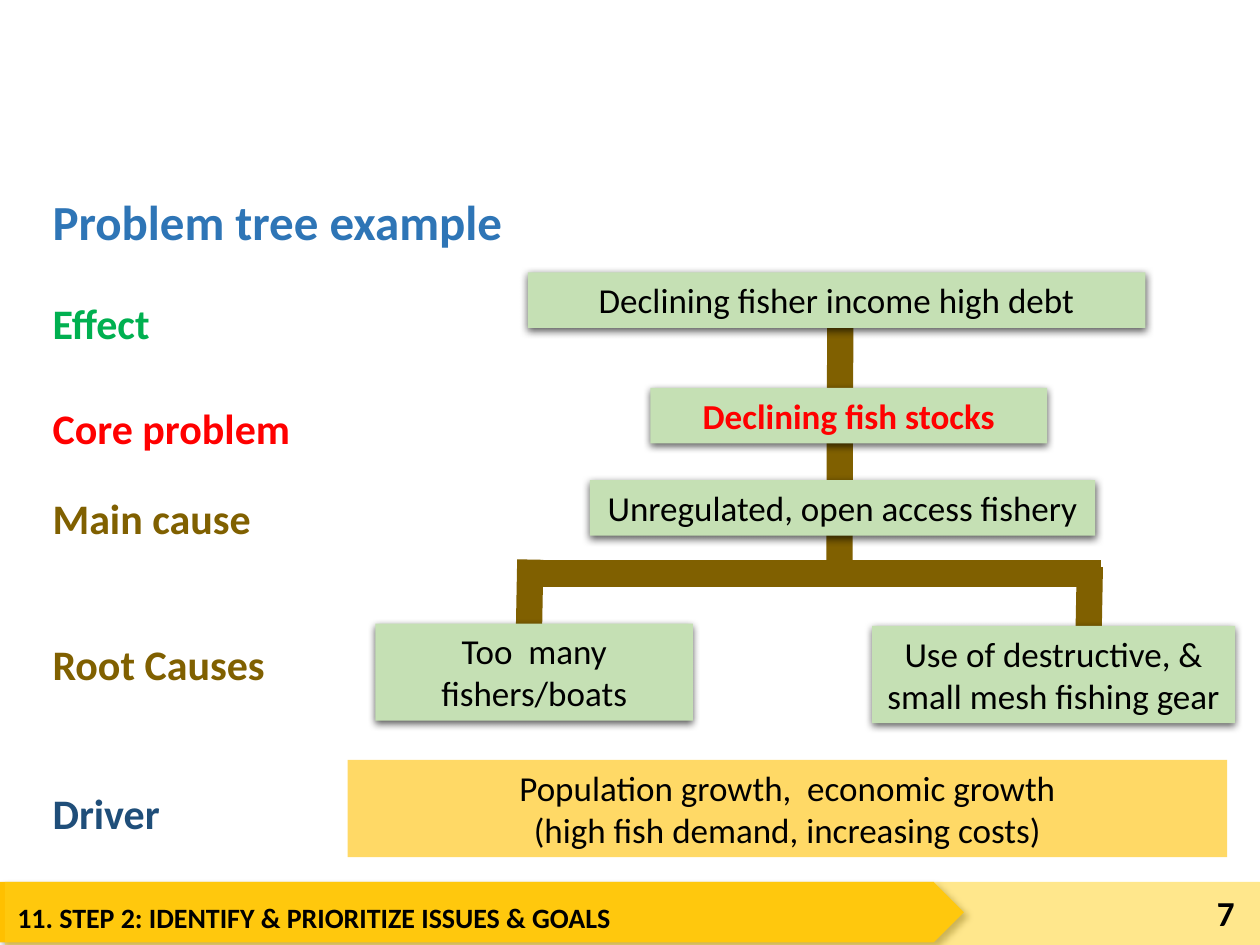
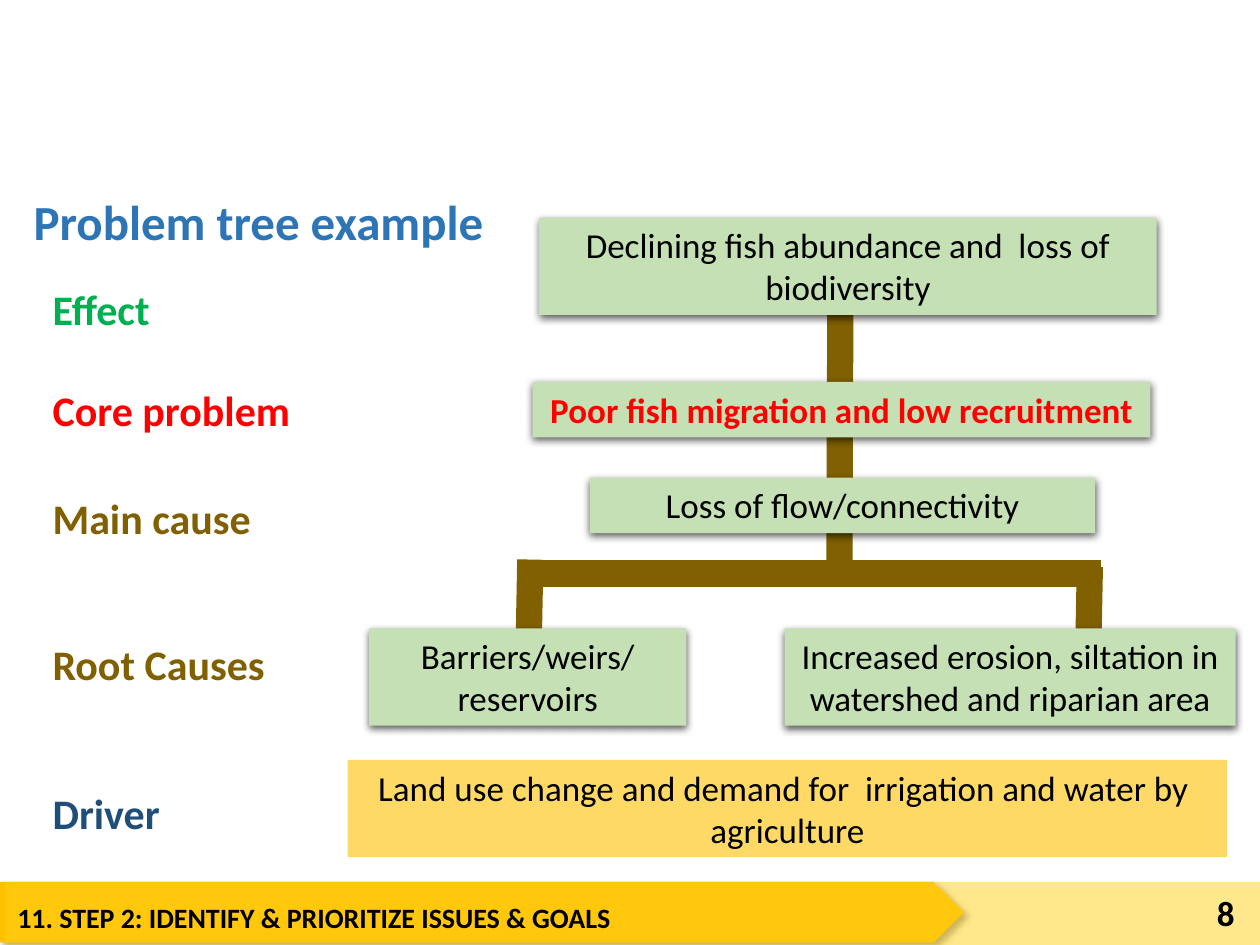
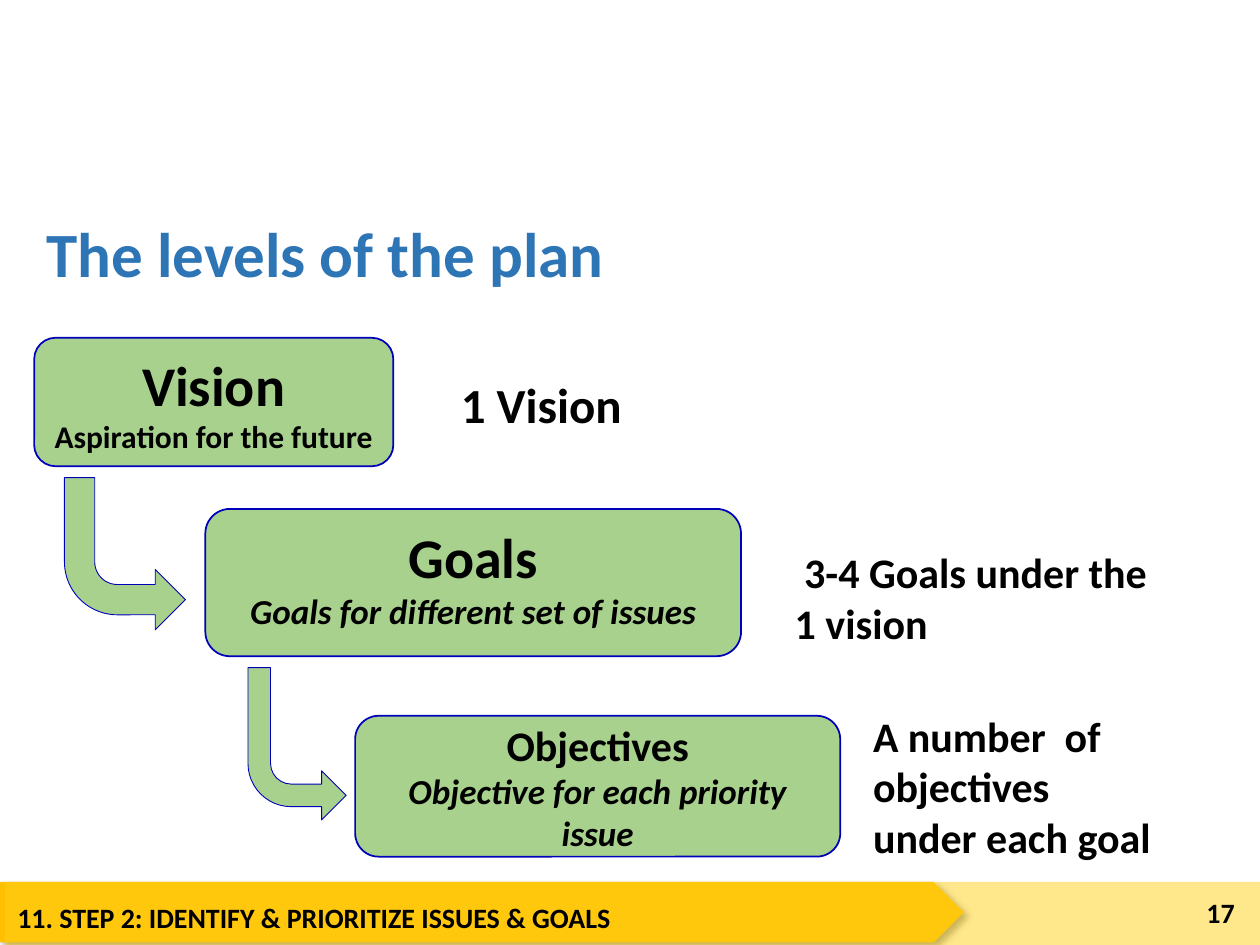
import pptx
import pptx.dml.color
import pptx.enum.shapes
import pptx.enum.text
import pptx.oxml
import pptx.oxml.ns
import pptx.util
from dataclasses import dataclass

Cm = pptx.util.Cm
Pt = pptx.util.Pt
SHAPE = pptx.enum.shapes.MSO_SHAPE
ALIGN = pptx.enum.text.PP_ALIGN
ANCHOR = pptx.enum.text.MSO_ANCHOR


@dataclass(frozen=True)
class Theme:
    font: str = "Calibri"
    black: str = "000000"
    title: str = "2E75B6"
    effect: str = "00B050"
    core: str = "FF0000"
    cause: str = "806000"
    driver: str = "1F4E79"
    node: str = "C5E0B4"
    driver_fill: str = "FFD966"
    level: str = "A9D18E"
    level_line: str = "0000BA"
    footer_arrow: str = "FFC000"
    footer_band: str = "FFD01B"
    small: int = 16
    caption: int = 18
    body: int = 20
    label: int = 24
    heading: int = 28
    level_name: int = 32
    large_title: int = 36
    branch_width: int = 15
    footer_shadow: tuple = (40, 4, 3, 45)
    node_shadow: tuple = (63, 4.5, 1.5, 90)


THEME = Theme()
FOOTER = "11. STEP 2: IDENTIFY & PRIORITIZE ISSUES & GOALS"


def rgb(color):
    return pptx.dml.color.RGBColor.from_string(color)


def write_text(frame, text, size=THEME.body, color=THEME.black, bold=False,
               align=ALIGN.LEFT, anchor=ANCHOR.TOP, line_spacing=None,
               subtitle=None, subtitle_size=THEME.body, subtitle_italic=False):
    frame.word_wrap = True
    frame.vertical_anchor = anchor
    lines = [(line, size, False) for line in text.split("\n")]
    if subtitle:
        lines.append((subtitle, subtitle_size, subtitle_italic))
    for index, (line, points, italic) in enumerate(lines):
        para = frame.add_paragraph() if index else frame.paragraphs[0]
        para.alignment = align
        para.line_spacing = line_spacing
        span = para.add_run()
        span.text = line
        span.font.name = THEME.font
        span.font.size = Pt(points)
        span.font.bold = bold
        span.font.italic = italic
        span.font.color.rgb = rgb(color)


class SlideBuilder:
    def __init__(self, theme):
        self.theme = theme
        self.deck = pptx.Presentation()
        self.deck.slide_width = Cm(25.4)
        self.deck.slide_height = Cm(19.05)
        self.page = None

    def new_page(self, title, number, title_at, title_size, number_size):
        self.page = self.deck.slides.add_slide(self.deck.slide_layouts[6])
        self.shape(SHAPE.PENTAGON, (0, 17.78, 19.43, 1.22), self.theme.footer_arrow,
                   shadow=self.theme.footer_shadow)
        self.shape(SHAPE.RECTANGLE, (0.1, 17.78, 25.3, 1.27), self.theme.footer_band, alpha=50)
        self.text((0.1, 18.03, 18.67, 1.04), FOOTER, size=self.theme.small, bold=True)
        self.text(title_at, title, size=title_size, color=self.theme.title, bold=True,
                  anchor=ANCHOR.MIDDLE, line_spacing=0.9)
        self.text((23.29, 17.88, 1.85, 1.02), number, size=number_size, bold=True,
                  align=ALIGN.RIGHT, anchor=ANCHOR.MIDDLE)

    def text(self, at, text, **style):
        box = self.page.shapes.add_textbox(*map(Cm, at))
        write_text(box.text_frame, text, **style)

    def shape(self, kind, at, fill, line=None, line_width=1, alpha=None, shadow=None):
        box = self.page.shapes.add_shape(kind, *map(Cm, at))
        box.fill.solid()
        box.fill.fore_color.rgb = rgb(fill)
        if line:
            box.line.color.rgb = rgb(line)
            box.line.width = Pt(line_width)
        else:
            box.line.fill.background()
        box.shadow.inherit = False
        properties = box._element.spPr
        if alpha:
            color = properties.find(".//" + pptx.oxml.ns.qn("a:srgbClr"))
            color.append(pptx.oxml.parse_xml(
                f'<a:alpha {pptx.oxml.ns.nsdecls("a")} val="{alpha * 1000}"/>'))
        if shadow:
            opacity, blur, distance, angle = shadow
            properties.find(pptx.oxml.ns.qn("a:effectLst")).append(pptx.oxml.parse_xml(
                f'<a:outerShdw {pptx.oxml.ns.nsdecls("a")} blurRad="{Pt(blur)}" '
                f'dist="{Pt(distance)}" dir="{angle * 60000}" algn="tl" rotWithShape="0">'
                f'<a:srgbClr val="{self.theme.black}"><a:alpha val="{opacity * 1000}"/>'
                '</a:srgbClr></a:outerShdw>'))
        return box

    def node(self, at, text, **style):
        box = self.shape(SHAPE.RECTANGLE, at, self.theme.node, shadow=self.theme.node_shadow)
        write_text(box.text_frame, text, align=ALIGN.CENTER, **style)

    def driver(self, text):
        box = self.shape(SHAPE.RECTANGLE, (7.01, 15.32, 17.73, 1.96), self.theme.driver_fill)
        write_text(box.text_frame, text, align=ALIGN.CENTER)

    def branch(self, start_x, start_y, end_x, end_y):
        line = self.page.shapes.add_connector(
            pptx.enum.shapes.MSO_CONNECTOR.STRAIGHT,
            Cm(start_x), Cm(start_y), Cm(end_x), Cm(end_y))
        line.line.color.rgb = rgb(self.theme.cause)
        line.line.width = Pt(self.theme.branch_width)
        line._element.spPr.append(pptx.oxml.parse_xml(
            f'<a:effectLst {pptx.oxml.ns.nsdecls("a")}/>'))

    def level(self, at, name, subtitle, **style):
        box = self.shape(SHAPE.ROUNDED_RECTANGLE, at, self.theme.level, self.theme.level_line)
        write_text(box.text_frame, name, bold=True, align=ALIGN.CENTER, subtitle=subtitle, **style)

    def bent_arrow(self, at, adjustments=()):
        arrow = self.shape(SHAPE.BENT_ARROW, at, self.theme.level, self.theme.level_line, 0.5)
        for index, value in enumerate(adjustments):
            arrow.adjustments[index] = value
        arrow._element.spPr.find(pptx.oxml.ns.qn("a:xfrm")).set("flipV", "1")


def add_problem_tree(builder, number, title_at, effect_top, core_top,
                     effect, core, main_cause, root_causes, driver):
    theme = builder.theme
    builder.new_page("Problem tree example", number, title_at, theme.heading, theme.body)
    for ends in ((16.94, 6.17, 16.92, 11.79), (22.2, 11.56, 10.44, 11.56),
                 (10.69, 11.28, 10.64, 13.94), (21.97, 11.43, 21.92, 14.07)):
        builder.branch(*ends)
    labels = (
        ("Effect", effect_top, 2.51, theme.effect),
        ("Core problem", core_top, 7.39, theme.core),
        ("Main cause", 9.8, 4.8, theme.cause),
        ("Root Causes", 12.75, 4.8, theme.cause),
        ("Driver", 15.75, 6.2, theme.driver),
    )
    for label, top, width, color in labels:
        builder.text((0.81, top, width, 1.27), label, size=theme.label, color=color, bold=True)
    builder.node(*effect)
    builder.node(*core, color=theme.core, bold=True)
    for cause in (main_cause, *root_causes):
        builder.node(*cause)
    builder.driver(driver)


def add_plan_levels(builder):
    theme = builder.theme
    builder.new_page("The levels of the plan", "17", (0.69, 4.14, 22.99, 2.08),
                     theme.large_title, theme.small)
    builder.bent_arrow((1.3, 9.63, 2.44, 3.07))
    builder.bent_arrow((5, 13.46, 1.98, 3.07), (0.23, 0.25, 0.25, 0.44))
    builder.level((0.69, 6.81, 7.24, 2.59), "Vision", "Aspiration for the future",
                  size=theme.level_name, subtitle_size=theme.caption)
    builder.level((4.14, 10.26, 10.8, 2.97), "Goals", "Goals for different set of issues",
                  size=theme.level_name, subtitle_italic=True)
    builder.level((7.16, 14.43, 9.78, 2.84), "Objectives", "Objective for each priority issue",
                  size=theme.label, subtitle_italic=True, anchor=ANCHOR.MIDDLE)
    notes = (
        ((9.04, 7.42, 4.57, 1.45), "1 Vision", theme.heading),
        ((15.77, 10.9, 8.18, 2.31), " 3-4 Goals under the 1 vision", theme.label),
        ((17.35, 14.2, 7.82, 3.33), "A number  of objectives\nunder each goal", theme.label),
    )
    for at, text, size in notes:
        builder.text(at, text, size=size, bold=True)


def main():
    builder = SlideBuilder(THEME)
    add_problem_tree(
        builder, "7", (0.81, 3.48, 21.08, 2.08), effect_top=5.87, core_top=7.98,
        effect=((10.64, 5.49, 12.45, 1.12), "Declining fisher income high debt"),
        core=((13.11, 7.82, 8, 1.12), "Declining fish stocks"),
        main_cause=((11.89, 9.68, 10.19, 1.12), "Unregulated, open access fishery"),
        root_causes=(
            ((7.57, 12.57, 6.4, 1.96), "Too  many fishers/boats"),
            ((17.58, 12.62, 7.32, 1.96), "Use of destructive, & small mesh fishing gear"),
        ),
        driver="Population growth,  economic growth\n(high fish demand, increasing costs)")
    add_problem_tree(
        builder, "8", (0.43, 3.48, 21.46, 2.08), effect_top=5.59, core_top=7.62,
        effect=((10.87, 4.39, 12.45, 1.96), "Declining fish abundance and  loss of biodiversity"),
        core=((10.74, 7.7, 12.45, 1.12), "Poor fish migration and low recruitment"),
        main_cause=((11.89, 9.63, 10.19, 1.12), "Loss of flow/connectivity"),
        root_causes=(
            ((7.44, 12.67, 6.4, 1.96), "Barriers/weirs/ reservoirs"),
            ((15.82, 12.67, 9.09, 1.96),
             "Increased erosion, siltation in watershed and riparian area"),
        ),
        driver="Land use change and demand for  irrigation and water by  agriculture")
    add_plan_levels(builder)
    builder.deck.save("out.pptx")


if __name__ == "__main__":
    main()
